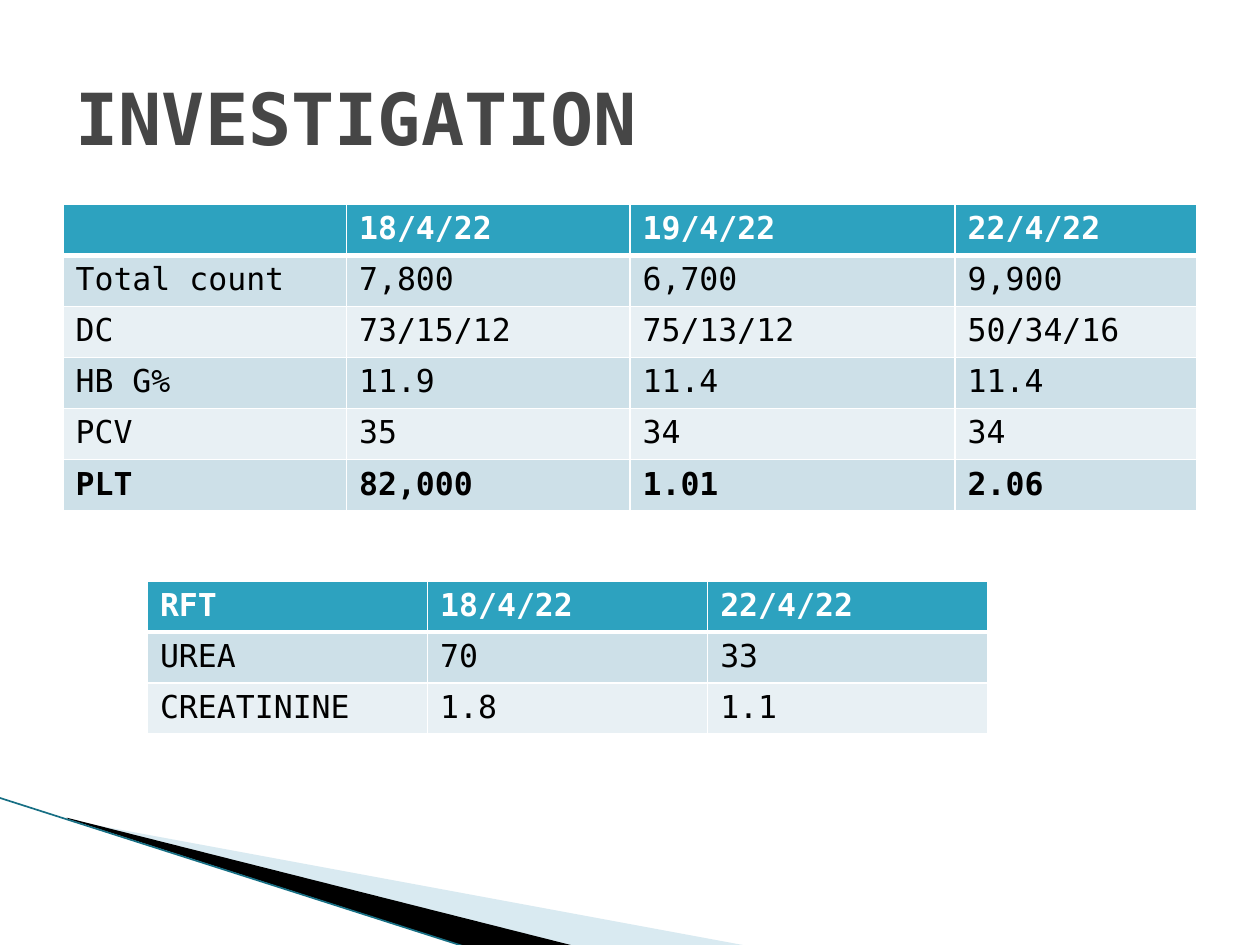
from dataclasses import dataclass

import pptx
import pptx.dml.color
import pptx.enum.shapes
import pptx.enum.text
import pptx.oxml
import pptx.oxml.ns
import pptx.util
from pptx.util import Inches

FONT = "DejaVu Sans Mono"
WHITE, BLACK, TEAL = "FFFFFF", "000000", "2DA2BF"
BAND_COLORS = ("CDE0E8", "E8F0F4")
ROW_HEIGHT = pptx.util.Pt(29.2)


@dataclass
class Wedge:
    frame: tuple[float, float, float, float]
    points: list[tuple[float, float]]
    color: str
    opacity: int = 100


@dataclass
class ResultTable:
    left: float
    top: float
    column_widths: list[float]
    rows: list[list[str]]
    bold_labels: tuple[str, ...] = ()


def rgb(color: str) -> pptx.dml.color.RGBColor:
    return pptx.dml.color.RGBColor.from_string(color)


def write_text(text_frame, text: str, *, size: float, color: str, bold: bool = False) -> None:
    paragraph = text_frame.paragraphs[0]
    paragraph.alignment = pptx.enum.text.PP_ALIGN.LEFT
    if not text:
        return
    run = paragraph.add_run()
    run.text = text
    run.font.name = FONT
    run.font.size = pptx.util.Pt(size)
    run.font.bold = bold
    run.font.color.rgb = rgb(color)


def add_border(cell, side: str, width: float) -> None:
    namespace = pptx.oxml.ns.nsdecls("a")
    border = pptx.oxml.parse_xml(
        f'<a:ln{side} {namespace} w="{pptx.util.Pt(width)}"><a:solidFill>'
        f'<a:srgbClr val="{WHITE}"/></a:solidFill></a:ln{side}>')
    cell._tc.get_or_add_tcPr().append(border)


def set_frame(shape, frame: tuple[float, float, float, float]) -> None:
    """Give a freeform its own frame while its outline stays in place."""
    left, top, width, height = (Inches(length) for length in frame)
    shift_x, shift_y = shape.left - left, shape.top - top
    outline = shape._element.spPr.find(".//" + pptx.oxml.ns.qn("a:path"))
    outline.set("w", str(width))
    outline.set("h", str(height))
    for point in outline.iter(pptx.oxml.ns.qn("a:pt")):
        point.set("x", str(int(point.get("x")) + shift_x))
        point.set("y", str(int(point.get("y")) + shift_y))
    shape.left, shape.top, shape.width, shape.height = left, top, width, height


def draw_wedge(slide, wedge: Wedge) -> None:
    points = [(Inches(x), Inches(y)) for x, y in wedge.points]
    builder = slide.shapes.build_freeform(*points[0], scale=1.0)
    builder.add_line_segments(points[1:], close=True)
    shape = builder.convert_to_shape()
    set_frame(shape, wedge.frame)
    shape.shadow.inherit = False
    shape.fill.solid()
    shape.fill.fore_color.rgb = rgb(wedge.color)
    shape.line.fill.background()
    if wedge.opacity < 100:
        color = shape._element.spPr.find(".//" + pptx.oxml.ns.qn("a:srgbClr"))
        alpha = color.makeelement(pptx.oxml.ns.qn("a:alpha"), {"val": str(wedge.opacity * 1000)})
        color.append(alpha)


def draw_edge_line(slide) -> None:
    line = slide.shapes.add_connector(
        pptx.enum.shapes.MSO_CONNECTOR.STRAIGHT,
        Inches(-0.01), Inches(6.33), Inches(3.71), Inches(7.52))
    line.line.color.rgb = rgb("176F84")
    line.line.width = pptx.util.Pt(0.95)
    properties = line._element.spPr
    properties.append(properties.makeelement(pptx.oxml.ns.qn("a:effectLst"), {}))


def draw_table(slide, result: ResultTable) -> None:
    table = slide.shapes.add_table(
        len(result.rows), len(result.column_widths),
        Inches(result.left), Inches(result.top),
        Inches(sum(result.column_widths)), ROW_HEIGHT * len(result.rows)).table
    for column, width in zip(table.columns, result.column_widths):
        column.width = Inches(width)
    for row_index, values in enumerate(result.rows):
        table.rows[row_index].height = ROW_HEIGHT
        is_header = row_index == 0
        for column_index, value in enumerate(values):
            cell = table.cell(row_index, column_index)
            # A thick rule separates the header from the first data row
            widths = {"L": 1, "R": 1, "T": 3 if row_index == 1 else 1, "B": 3 if is_header else 1}
            for side, width in widths.items():
                add_border(cell, side, width)
            cell.fill.solid()
            cell.fill.fore_color.rgb = rgb(TEAL if is_header else BAND_COLORS[(row_index - 1) % 2])
            write_text(cell.text_frame, value, size=18, color=WHITE if is_header else BLACK,
                       bold=is_header or values[0] in result.bold_labels)


WEDGES = [
    Wedge((0.78, 5.47, 4.16, 1.58),
          [(0.55, 6.51), (5.95, 7.51), (4.56, 7.51), (0.55, 6.5)], "A0CBDC", 40),
    Wedge((-0.06, 6.33, 4.16, 0.92),
          [(0.53, 6.49), (4.57, 7.51), (3.72, 7.52), (0.54, 6.5)], BLACK),
]

TABLES = [
    ResultTable(0.5, 1.62, [2.25, 2.25, 2.58, 1.92], [
        ["", "18/4/22", "19/4/22", "22/4/22"],
        ["Total count", "7,800", "6,700", "9,900"],
        ["DC", "73/15/12", "75/13/12", "50/34/16"],
        ["HB G%", "11.9", "11.4", "11.4"],
        ["PCV", "35", "34", "34"],
        ["PLT", "82,000", "1.01", "2.06"],
    ], bold_labels=("PLT",)),
    ResultTable(1.17, 4.61, [6.67 / 3] * 3, [
        ["RFT", "18/4/22", "22/4/22"],
        ["UREA", "70", "33"],
        ["CREATININE", "1.8", "1.1"],
    ]),
]


def main() -> None:
    presentation = pptx.Presentation()
    presentation.slide_width, presentation.slide_height = Inches(10), Inches(7.5)
    slide = presentation.slides.add_slide(presentation.slide_layouts[5])

    # Corner decoration
    for wedge in WEDGES:
        draw_wedge(slide, wedge)
    draw_edge_line(slide)

    # Title
    title = slide.shapes.title
    title.left, title.top, title.width, title.height = (
        Inches(0.5), Inches(0.3), Inches(9), Inches(1.25))
    title.text_frame.vertical_anchor = pptx.enum.text.MSO_ANCHOR.MIDDLE
    write_text(title.text_frame, "INVESTIGATION", size=41, color="464646", bold=True)

    # Blood count and renal function results
    for result in TABLES:
        draw_table(slide, result)

    presentation.save("out.pptx")


if __name__ == "__main__":
    main()
